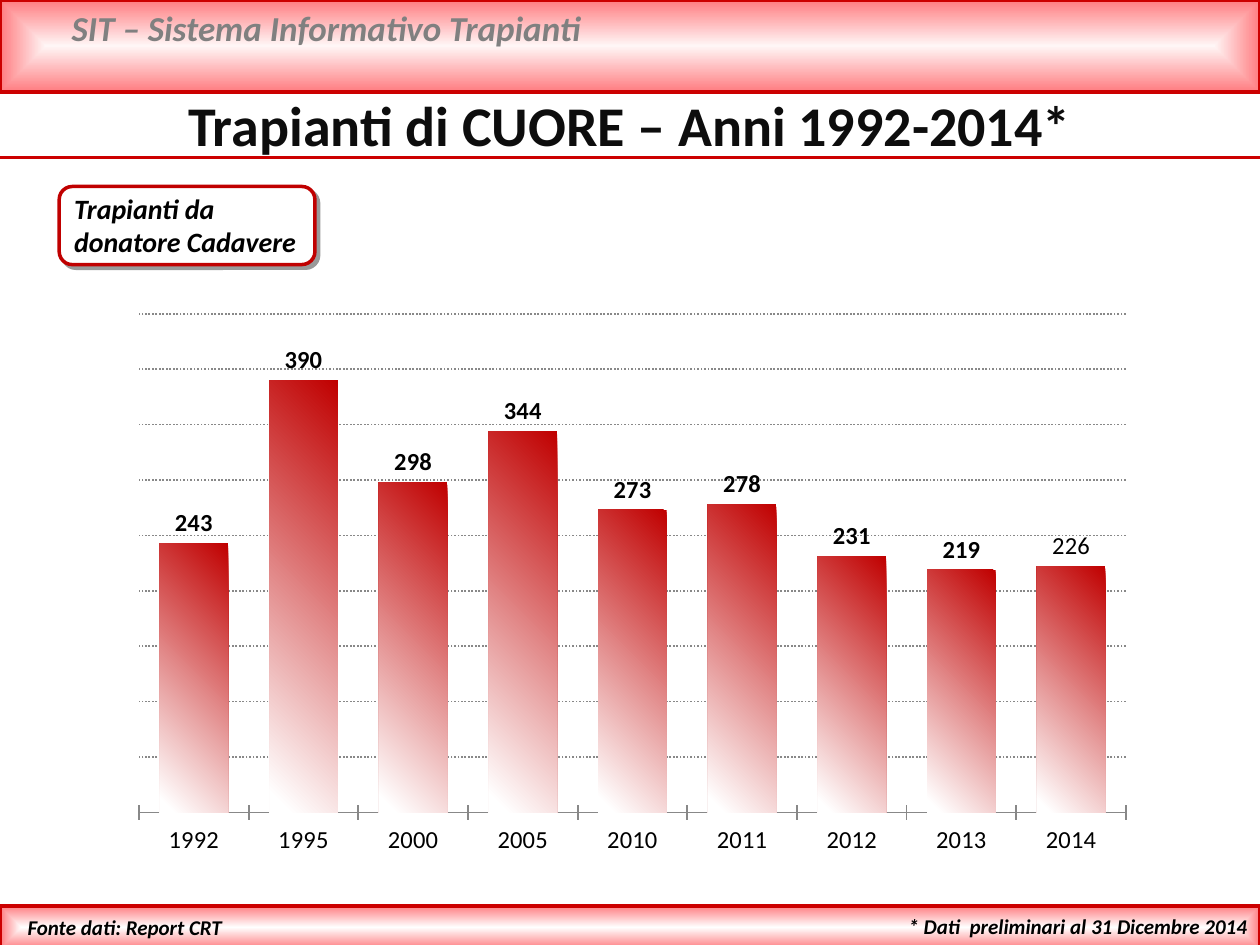
import pptx
import pptx.chart.data
import pptx.dml.color
import pptx.enum.chart
import pptx.enum.dml
import pptx.enum.shapes
import pptx.enum.text
import pptx.oxml
import pptx.oxml.ns
import pptx.util

Inches, Pt = pptx.util.Inches, pptx.util.Pt
qn = pptx.oxml.ns.qn
SHAPES = pptx.enum.shapes.MSO_SHAPE
ALIGN = pptx.enum.text.PP_ALIGN

FONT = "Calibri"
COLORS = {
    "border": "CC0000", "bar": "C00000", "pink": "FF7C80", "pale": "FFF6F6",
    "white": "FFFFFF", "grey": "808080", "grid": "888888",
    "title": "0D0D0D", "black": "000000",
}
# top, height, centre colour
BANDS = [(0, 0.73, "pale"), (7.19, 0.34, "white")]
# text, (left, top, width, height), format
TEXTS = [
    ("SIT – Sistema Informativo Trapianti", (0.47, 0, 8.98, 0.44),
     dict(size=20, color="grey")),
    ("* Dati  preliminari al 31 Dicembre 2014", (5.87, 7.2, 4.13, 0.3),
     dict(size=12, align=ALIGN.RIGHT)),
    ("Fonte dati: Report CRT", (0.12, 7.21, 3.21, 0.3), dict(size=12)),
    ("Trapianti di CUORE – Anni 1992-2014*", (0, 0.67, 10, 0.64),
     dict(size=32, color="title", italic=False, align=ALIGN.CENTER)),
]
DONOR_NOTE = "Trapianti da donatore Cadavere"
HEARTS = {"1992": 243, "1995": 390, "2000": 298, "2005": 344, "2010": 273,
          "2011": 278, "2012": 231, "2013": 219, "2014": 222}
LAST_LABEL = "226"
# inner plot area as fractions of the chart frame
PLOT_AREA = {"x": 0.02, "y": 0.02, "w": 0.96, "h": 0.88}


def rgb(name):
    return pptx.dml.color.RGBColor.from_string(COLORS[name])


def set_line(line, color, width):
    line.color.rgb = rgb(color)
    line.width = Pt(width)


def set_gradient(fill, first, last, end=1):
    fill.gradient()
    for stop, color, position in zip(fill.gradient_stops, (first, last), (0, end)):
        stop.color.rgb = rgb(color)
        stop.position = position


def add_text(page, text, at, size, color="black", italic=True, align=ALIGN.LEFT):
    box = page.shapes.add_textbox(*map(Inches, at))
    box.text_frame.word_wrap = True
    para = box.text_frame.paragraphs[0]
    para.alignment = align
    span = para.add_run()
    span.text = text
    font = span.font
    font.name, font.size, font.bold, font.italic = FONT, Pt(size), True, italic
    font.color.rgb = rgb(color)


def add_band(page, top, height, centre):
    """Full-width strip whose gradient spreads from its centre."""
    band = page.shapes.add_shape(
        SHAPES.RECTANGLE, 0, Inches(top), Inches(10), Inches(height))
    band.shadow.inherit = False
    set_gradient(band.fill, centre, "pink")
    set_line(band.line, "border", 2)
    gradient = band.element.spPr.find(qn("a:gradFill"))
    gradient.replace(gradient.find(qn("a:lin")), pptx.oxml.parse_xml(
        f'<a:path {pptx.oxml.ns.nsdecls("a")} path="shape">'
        '<a:fillToRect l="50000" t="50000" r="50000" b="50000"/></a:path>'))


def add_rule(page, top):
    rule = page.shapes.add_connector(
        pptx.enum.shapes.MSO_CONNECTOR.STRAIGHT,
        0, Inches(top), Inches(10), Inches(top))
    set_line(rule.line, "border", 2)
    rule.element.spPr.append(pptx.oxml.parse_xml(
        f'<a:effectLst {pptx.oxml.ns.nsdecls("a")}/>'))


def add_donor_frame(page):
    frame = page.shapes.add_shape(
        SHAPES.ROUNDED_RECTANGLE, *map(Inches, (0.47, 1.48, 2.03, 0.62)))
    frame.adjustments[0] = 0.167
    frame.fill.solid()
    frame.fill.fore_color.rgb = rgb("white")
    set_line(frame.line, "bar", 2)
    frame.shadow.inherit = False
    frame.element.spPr.find(qn("a:effectLst")).append(pptx.oxml.parse_xml(
        f'<a:outerShdw {pptx.oxml.ns.nsdecls("a")} blurRad="0" dist="{Pt(3)}" '
        'dir="2700000" algn="tl" rotWithShape="0">'
        f'<a:srgbClr val="{COLORS["black"]}"><a:alpha val="40000"/></a:srgbClr>'
        '</a:outerShdw>'))


def set_plot_area(chart):
    area = chart.element.find(qn("c:chart")).find(qn("c:plotArea"))
    for old in area.findall(qn("c:layout")):
        area.remove(old)
    sizes = "".join(f'<c:{key} val="{value}"/>' for key, value in PLOT_AREA.items())
    area.insert(0, pptx.oxml.parse_xml(
        f'<c:layout {pptx.oxml.ns.nsdecls("c")}><c:manualLayout>'
        '<c:layoutTarget val="inner"/><c:xMode val="edge"/><c:yMode val="edge"/>'
        f'{sizes}</c:manualLayout></c:layout>'))


def add_heart_chart(page):
    data = pptx.chart.data.CategoryChartData()
    data.categories = list(HEARTS)
    data.add_series("Series 1", list(HEARTS.values()))
    chart = page.shapes.add_chart(
        pptx.enum.chart.XL_CHART_TYPE.COLUMN_CLUSTERED,
        *map(Inches, (0.94, 2.4, 8.16, 4.5)), data).chart
    chart.has_legend = chart.has_title = False
    chart.font.name, chart.font.size = FONT, Pt(10)
    chart.font.color.rgb = rgb("black")
    set_plot_area(chart)

    years = chart.category_axis
    years.major_tick_mark = pptx.enum.chart.XL_TICK_MARK.CROSS
    years.tick_labels.font.size = Pt(14)
    set_line(years.format.line, "grid", 1)

    counts = chart.value_axis
    counts.visible = False
    counts.minimum_scale, counts.maximum_scale, counts.major_unit = 0, 450, 50
    counts.has_major_gridlines = True
    grid = counts.major_gridlines.format.line
    set_line(grid, "grid", 1)
    grid.dash_style = pptx.enum.dml.MSO_LINE.ROUND_DOT

    plot = chart.plots[0]
    plot.vary_by_categories = False
    plot.gap_width, plot.overlap = 60, -20
    bars = plot.series[0]
    set_gradient(bars.format.fill, "bar", "white", end=0.96)
    bars.format.fill.gradient_angle = 225

    outside = pptx.enum.chart.XL_LABEL_POSITION.OUTSIDE_END
    labels = bars.data_labels
    labels.show_value = True
    labels.position = outside
    labels.font.size, labels.font.bold = Pt(14), True
    last = bars.points[len(HEARTS) - 1].data_label
    span = last.text_frame.paragraphs[0].add_run()
    span.text = LAST_LABEL
    span.font.size, span.font.bold = Pt(14), False
    last.position = outside


def main():
    deck = pptx.Presentation()
    deck.slide_width, deck.slide_height = Inches(10), Inches(7.5)
    page = deck.slides.add_slide(deck.slide_layouts[6])
    for band in BANDS:
        add_band(page, *band)
    add_rule(page, 1.25)
    for text, at, style in TEXTS:
        add_text(page, text, at, **style)
    add_donor_frame(page)
    add_heart_chart(page)
    add_text(page, DONOR_NOTE, (0.49, 1.47, 2.02, 0.64), size=16)
    deck.save("out.pptx")


if __name__ == "__main__":
    main()
